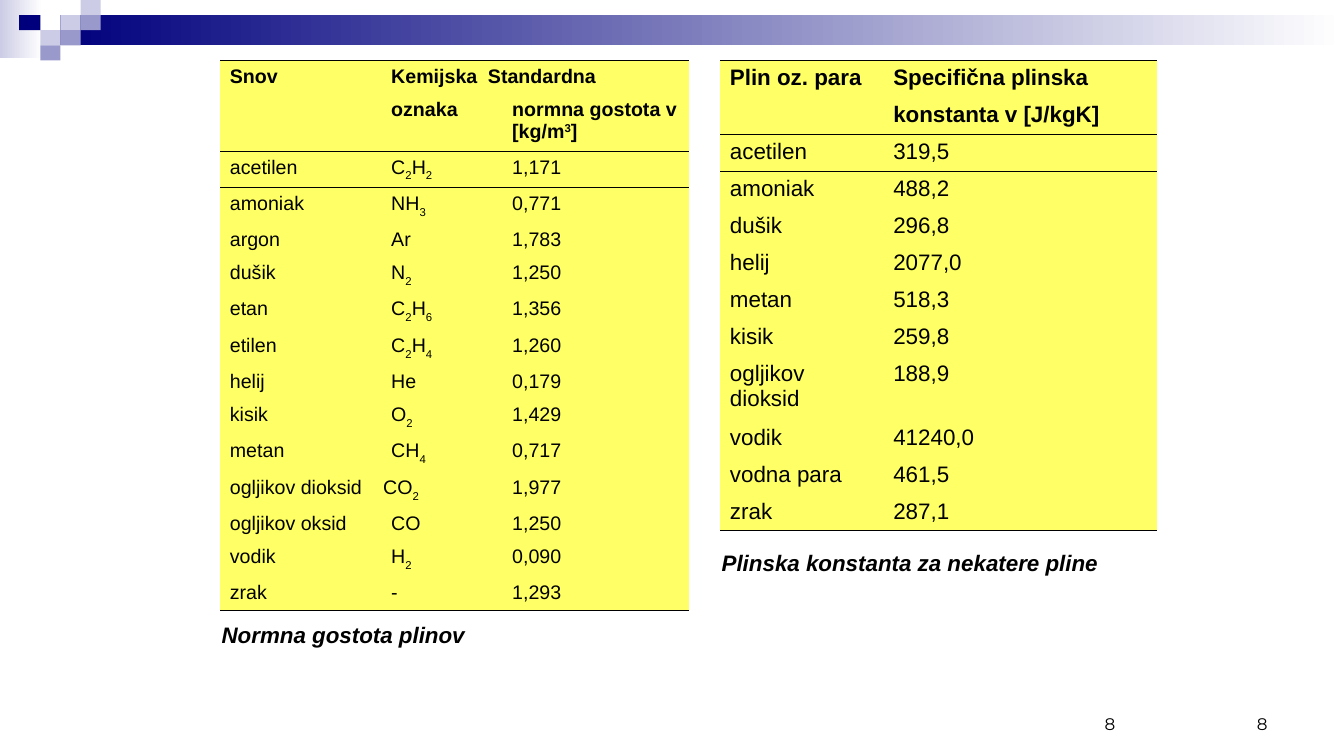
from lxml import etree
from pptx import Presentation
from pptx.dml.color import RGBColor
from pptx.enum.shapes import MSO_SHAPE
from pptx.enum.text import MSO_ANCHOR, PP_ALIGN
from pptx.oxml.ns import qn
from pptx.util import Inches, Pt

RECTANGLE = MSO_SHAPE.RECTANGLE
MIDDLE, BOTTOM = MSO_ANCHOR.MIDDLE, MSO_ANCHOR.BOTTOM
LEFT, RIGHT = PP_ALIGN.LEFT, PP_ALIGN.RIGHT

BLACK, YELLOW = "000000", "FFFF66"
NAVY, LILAC, PALE, WHITE = "00007D", "9999CC", "CCCCE6", "FFFFFF"
PLAIN_STYLE = "{2D5ABB26-0587-4C30-8999-92F81FD0307C}"
HEADER_ROWS = 2

# left, top, width, height, colours (two make a gradient)
BANNER = [
    (0, 0, 0.42, 0.58, (PALE, WHITE)),
    (0.6, 0.15, 12.73, 0.3, (NAVY, WHITE)),
    (0.6, 0.15, 0.2, 0.15, (PALE,)),
    (0.8, 0, 0.2, 0.15, (PALE,)),
    (0.8, 0.15, 0.2, 0.15, (LILAC,)),
    (0.4, 0.3, 0.2, 0.15, (PALE,)),
    (0.19, 0.15, 0.21, 0.15, (NAVY,)),
    (0.6, 0.3, 0.2, 0.15, (LILAC,)),
    (0.4, 0.45, 0.2, 0.15, (LILAC,)),
]

# "_" lowers and "^" raises the next character; None continues a merged cell
DENSITIES = [
    ("Snov", "Kemijska\tStandardna", None),
    ("", "oznaka", "normna gostota v [kg/m^3]"),
    ("acetilen", "C_2H_2", "1,171"),
    ("amoniak", "NH_3", "0,771"),
    ("argon", "Ar", "1,783"),
    ("dušik", "N_2", "1,250"),
    ("etan", "C_2H_6", "1,356"),
    ("etilen", "C_2H_4", "1,260"),
    ("helij", "He", "0,179"),
    ("kisik", "O_2", "1,429"),
    ("metan", "CH_4", "0,717"),
    ("ogljikov dioksid\tCO_2", None, "1,977"),
    ("ogljikov oksid", "CO", "1,250"),
    ("vodik", "H_2", "0,090"),
    ("zrak", "-", "1,293"),
]
GAS_CONSTANTS = [
    ("Plin oz. para", "Specifična plinska"),
    ("", "konstanta v [J/kgK]"),
    ("acetilen", "319,5"),
    ("amoniak", "488,2"),
    ("dušik", "296,8"),
    ("helij", "2077,0"),
    ("metan", "518,3"),
    ("kisik", "259,8"),
    ("ogljikov dioksid", "188,9"),
    ("vodik", "41240,0"),
    ("vodna para", "461,5"),
    ("zrak", "287,1"),
]
TAB_STOPS = {"Kemijska\tStandardna": 0.96, "ogljikov dioksid\tCO_2": 1.52}

# text, left, top, width, height, anchor, alignment, size, font, bold italic
LABELS = [
    ("8", 9.56, 6.83, 3.11, 0.5, BOTTOM, RIGHT, 12, "Montserrat", False),
    ("8", 8.83, 6.83, 2.33, 0.5, BOTTOM, RIGHT, 12, "Montserrat", False),
    ("Normna gostota plinov", 2.1, 6.06, 2.9, 0.47, MIDDLE, LEFT, 16, "Arial", True),
    ("Plinska konstanta za nekatere pline", 7.06, 5.4, 4.2, 0.37, MIDDLE, LEFT, 16,
     "Arial", True),
]


def rgb(value):
    return RGBColor.from_string(value)


def set_font(font, size, name, bold, italic=False):
    font.size, font.name, font.bold, font.italic = Pt(size), name, bold, italic
    font.color.rgb = rgb(BLACK)


def add_banner_block(slide, left, top, width, height, colors):
    block = slide.shapes.add_shape(
        RECTANGLE, Inches(left), Inches(top), Inches(width), Inches(height))
    block.shadow.inherit = False
    block.line.fill.background()
    if len(colors) == 1:
        block.fill.solid()
        block.fill.fore_color.rgb = rgb(colors[0])
        return
    block.fill.gradient()
    block.fill.gradient_angle = 0
    for stop, position, color in zip(block.fill.gradient_stops, (0, 1), colors):
        stop.position = position
        stop.color.rgb = rgb(color)


def add_label(slide, text, left, top, width, height, anchor, alignment, size, name, strong):
    box = slide.shapes.add_textbox(Inches(left), Inches(top), Inches(width), Inches(height))
    frame = box.text_frame
    frame.word_wrap = True
    frame.vertical_anchor = anchor
    paragraph = frame.paragraphs[0]
    paragraph.text = text
    paragraph.alignment = alignment
    set_font(paragraph.font, size, name, strong, strong)


def add_marked_runs(paragraph, text):
    """Add runs, setting the character after "_" or "^" as sub- or superscript."""
    for piece in text.replace("_", "|_").replace("^", "|^").split("|"):
        if piece[:1] in ("_", "^"):
            script = paragraph.add_run()
            script.text = piece[1]
            baseline = "-30000" if piece[0] == "_" else "30000"
            script.font._element.set("baseline", baseline)
            piece = piece[2:]
        if piece:
            paragraph.add_run().text = piece


def add_border(cell, side):
    properties = cell._tc.get_or_add_tcPr()
    line = etree.Element(qn("a:" + side), w=str(Pt(1)))
    fill = etree.SubElement(line, qn("a:solidFill"))
    etree.SubElement(fill, qn("a:srgbClr"), val=BLACK)
    properties.insert(0, line)


def fill_cell(cell, text, size, bold):
    paragraph = cell.text_frame.paragraphs[0]
    if text in TAB_STOPS:
        tabs = etree.SubElement(paragraph._p.get_or_add_pPr(), qn("a:tabLst"))
        etree.SubElement(tabs, qn("a:tab"), pos=str(Inches(TAB_STOPS[text])), algn="l")
    set_font(paragraph.font, size, "Arial", bold)
    if text:
        add_marked_runs(paragraph, text)
    else:
        etree.SubElement(paragraph._p, qn("a:endParaRPr"), sz=str(size * 100))


def add_gas_table(slide, rows, left, top, widths, heights, size):
    table = slide.shapes.add_table(
        len(rows), len(widths), Inches(left), Inches(top),
        Inches(sum(widths)), Inches(sum(heights))).table
    table.first_row = table.horz_banding = False
    table._tbl.tblPr.find(qn("a:tableStyleId")).text = PLAIN_STYLE
    for column, width in zip(table.columns, widths):
        column.width = Inches(width)
    for row_index, texts in enumerate(rows):
        table.rows[row_index].height = Inches(heights[row_index])
        for column_index, text in enumerate(texts):
            cell = table.cell(row_index, column_index)
            cell.fill.solid()
            cell.fill.fore_color.rgb = rgb(YELLOW)
            if row_index in (HEADER_ROWS - 1, len(rows) - 1):
                add_border(cell, "lnB")
            if row_index in (0, HEADER_ROWS):
                add_border(cell, "lnT")
            if text is None:
                table.cell(row_index, column_index - 1).merge(cell)
            else:
                fill_cell(cell, text, size, row_index < HEADER_ROWS)


def main():
    presentation = Presentation()
    presentation.slide_width, presentation.slide_height = Inches(13.33), Inches(7.5)
    slide = presentation.slides.add_slide(presentation.slide_layouts[6])
    for block in BANNER:
        add_banner_block(slide, *block)

    density_heights = [0.57 if row == 1 else 0.33 for row in range(len(DENSITIES))]
    add_gas_table(slide, DENSITIES, 2.18, 0.6, (1.6, 1.2, 1.85), density_heights, 14)

    tall_row, total = 0.63, 4.67
    single_row = (total - tall_row) / (len(GAS_CONSTANTS) - 1)
    constant_heights = [tall_row if name == "ogljikov dioksid" else single_row
                        for name, _ in GAS_CONSTANTS]
    add_gas_table(slide, GAS_CONSTANTS, 7.14, 0.6, (1.62, 2.72), constant_heights, 16)

    for label in LABELS:
        add_label(slide, *label)
    presentation.save("out.pptx")


if __name__ == "__main__":
    main()
